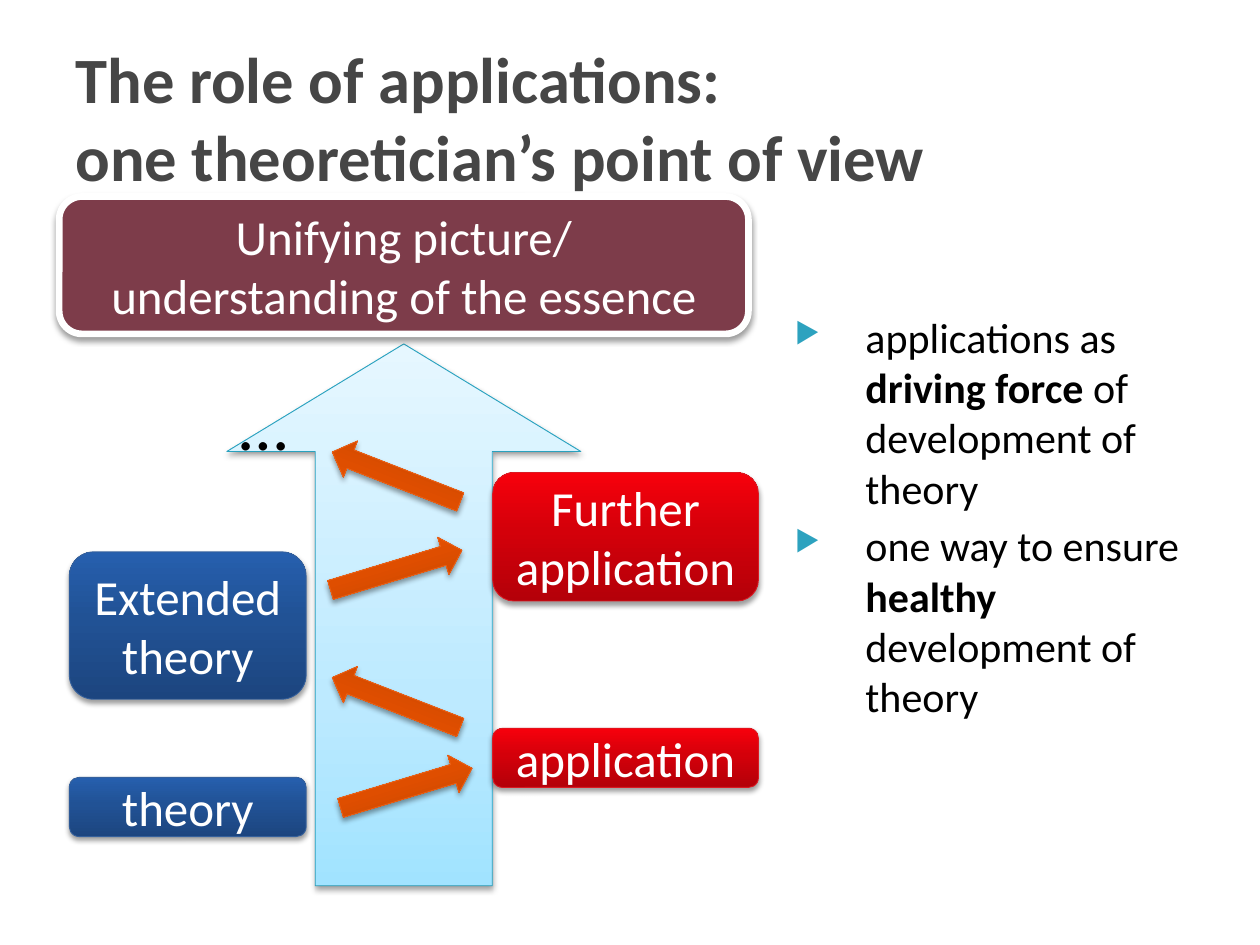
from lxml import etree
from pptx import Presentation
from pptx.dml.color import RGBColor
from pptx.enum.shapes import MSO_SHAPE as SHAPE
from pptx.enum.text import MSO_ANCHOR as ANCHOR, PP_ALIGN as ALIGN
from pptx.oxml.ns import qn
from pptx.util import Inches, Pt

COLORS = {"title": "464646", "text": "000000", "white": "FFFFFF", "bullet": "2DA2BF",
          "shadow": "000000", "essence": "7D3C4A"}
GRADIENTS = {
    "pale": (("A1E3FF", "BDEAFF", "E6F7FF"), "28A1BE", 35),
    "blue": (("1C457F", "215295", "265FAE"), "35609C", 55),
    "red": (("B40009", "D4000A", "F7000C"), "DA1A23", 55),
    "orange": (("BE4300", "DF4E00", "FF5D05"), "EB6015", 55),
}
TITLE = {"size": Pt(36.9), "bold": True}
BODY = {"size": Pt(24)}
LABEL = {"size": Pt(28)}
DOTS = {"size": Pt(40)}


def child(parent, tag, **attrs):
    return etree.SubElement(parent, qn(tag), {k: str(v) for k, v in attrs.items()})


def add_run(p, text, color, formats):
    r = p.add_run()
    r.text = text
    for name, value in {"name": "Calibri", **formats}.items():
        setattr(r.font, name, value)
    r.font.color.rgb = RGBColor.from_string(COLORS[color])


def add_text_box(slide, box, anchor=ANCHOR.TOP):
    tf = slide.shapes.add_textbox(*map(Inches, box)).text_frame
    tf.word_wrap = True
    tf.vertical_anchor = anchor
    return tf


def add_shadow(s, blur):
    s.shadow.inherit = False
    effects = s._element.spPr.find(qn("a:effectLst"))
    shadow = child(effects, "a:outerShdw", blurRad=Pt(blur), dist=Pt(2),
                   dir=5400000, rotWithShape=0)
    color = child(shadow, "a:srgbClr", val=COLORS["shadow"])
    child(color, "a:alpha", val=38000)


def add_shape(slide, kind, box, blur=3.1):
    s = slide.shapes.add_shape(kind, *map(Inches, box))
    add_shadow(s, blur)
    return s


def fill_gradient(s, name):
    stops, line, middle = GRADIENTS[name]
    s.fill.gradient()
    s.fill.gradient_angle = 90
    gs_list = s._element.spPr.find(".//" + qn("a:gsLst"))
    for stop in list(gs_list):
        gs_list.remove(stop)
    for pos, color in zip((0, middle, 100), stops):
        child(child(gs_list, "a:gs", pos=pos * 1000), "a:srgbClr", val=color)
    s.line.color.rgb = RGBColor.from_string(line)
    s.line.width = Pt(0.5)


def add_label(s, lines):
    tf = s.text_frame
    tf.word_wrap = True
    tf.vertical_anchor = ANCHOR.MIDDLE
    for i, text in enumerate(lines):
        p = tf.add_paragraph() if i else tf.paragraphs[0]
        p.alignment = ALIGN.CENTER
        add_run(p, text, "white", LABEL)


def add_title(slide, box):
    p = add_text_box(slide, box, ANCHOR.MIDDLE).paragraphs[0]
    add_run(p, "The role of applications:", "title", TITLE)
    p.add_line_break()
    add_run(p, "one theoretician’s point of view", "title", TITLE)


def add_points(slide, box):
    points = (("applications as ", "driving force ", "of development of theory"),
              ("one way to ensure ", "healthy ", "development of theory"))
    tf = add_text_box(slide, box)
    for i, parts in enumerate(points):
        p = tf.add_paragraph() if i else tf.paragraphs[0]
        p.space_before = Pt(4)
        pPr = p._p.get_or_add_pPr()
        pPr.set("marL", str(Inches(0.68)))
        pPr.set("indent", str(Inches(-0.56)))
        child(child(pPr, "a:buClr"), "a:srgbClr", val=COLORS["bullet"])
        child(pPr, "a:buSzPct", val=68000)
        child(pPr, "a:buChar", char="▶")
        for j, text in enumerate(parts):
            add_run(p, text, "text", {**BODY, "bold": j == 1})


def add_essence(slide, box):
    s = add_shape(slide, SHAPE.ROUNDED_RECTANGLE, box, 3.5)
    s.fill.solid()
    s.fill.fore_color.rgb = RGBColor.from_string(COLORS["essence"])
    s.line.color.rgb = RGBColor.from_string(COLORS["white"])
    s.line.width = Pt(3.82)
    add_label(s, ("Unifying picture/", "understanding of the essence"))


def add_spiral(slide, box):
    left, top, width, height = box
    trunk = add_shape(slide, SHAPE.UP_ARROW, box, 3.5)
    trunk.adjustments[0], trunk.adjustments[1] = 0.5, 0.304
    fill_gradient(trunk, "pale")

    theory, application = (left - 1.25, 1.88, "blue"), (left + 2.11, 2.11, "red")
    for (x, w, color), y, h, text in (
            (theory, 3.44, 0.47, "theory"),
            (application, 3.05, 0.47, "application"),
            (theory, 1.65, 1.17, "Extended theory"),
            (application, 1.02, 1.02, "Further application")):
        s = add_shape(slide, SHAPE.ROUNDED_RECTANGLE, (x, top + y, w, h))
        fill_gradient(s, color)
        add_label(s, (text,))

    for x, y, angle in ((0.88, 3.37, 343.2), (0.8, 2.69, 201.3),
                        (0.8, 1.64, 343.2), (0.8, 0.9, 201.3)):
        s = add_shape(slide, SHAPE.RIGHT_ARROW, (left + x, top + y, 1.09, 0.31))
        s.rotation = angle
        fill_gradient(s, "orange")

    tf = add_text_box(slide, (left, top + 0.24, 1.33, 0.77))
    add_run(tf.paragraphs[0], "…", "text", DOTS)


def main():
    prs = Presentation()
    prs.slide_width, prs.slide_height = Inches(10), Inches(7.5)
    slide = prs.slides.add_slide(prs.slide_layouts[6])
    add_points(slide, (6.09, 2.42, 3.41, 4.15))
    add_title(slide, (0.5, 0.3, 9, 1.25))
    add_spiral(slide, (1.8, 2.73, 2.81, 4.3))
    add_essence(slide, (0.47, 1.56, 5.47, 1.09))
    prs.save("out.pptx")


if __name__ == "__main__":
    main()
